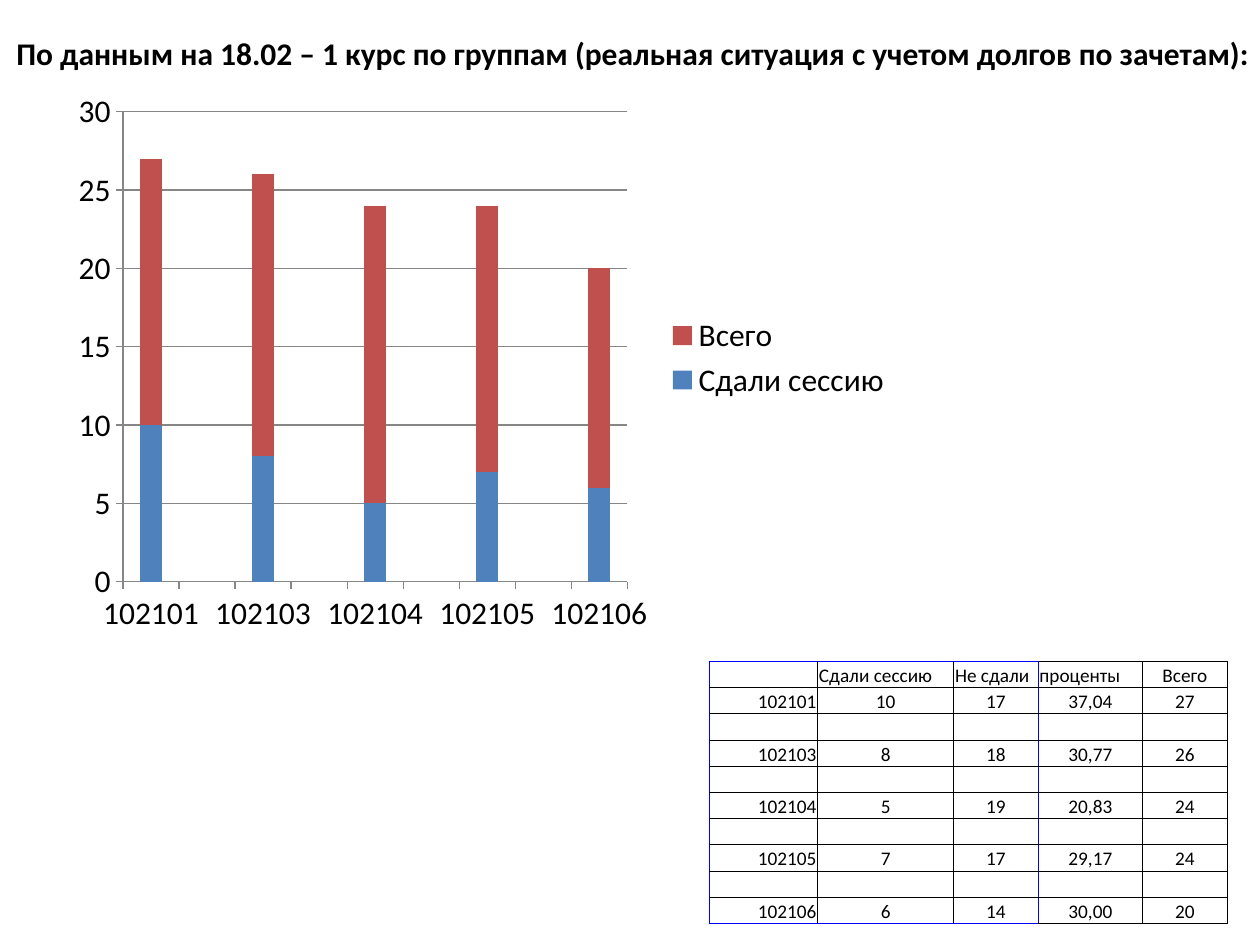
import pptx
import pptx.chart.data
import pptx.dml.color
import pptx.enum.chart
import pptx.enum.text
import pptx.util
from lxml import etree
from pptx.oxml.ns import qn

BLACK = pptx.dml.color.RGBColor(0x00, 0x00, 0x00)
LINK_BLUE = pptx.dml.color.RGBColor(0x00, 0x00, 0xFF)
PASSED_BLUE = pptx.dml.color.RGBColor(0x4F, 0x81, 0xBD)
TOTAL_RED = pptx.dml.color.RGBColor(0xC0, 0x50, 0x4D)
AXIS_GREY = pptx.dml.color.RGBColor(0x86, 0x86, 0x86)

ALIGN = pptx.enum.text.PP_ALIGN
ANCHOR = pptx.enum.text.MSO_ANCHOR

HEADING = "По данным на 18.02 – 1 курс по группам (реальная ситуация с учетом долгов по зачетам):"
HEADER = ["", "Сдали сессию", "Не сдали", "проценты", "Всего"]
GROUPS = [
    ("102101", 10, 17, "37,04", 27),
    ("102103", 8, 18, "30,77", 26),
    ("102104", 5, 19, "20,83", 24),
    ("102105", 7, 17, "29,17", 24),
    ("102106", 6, 14, "30,00", 20),
]


def spaced(items, gap):
    """Put a gap between neighbouring items."""
    result = []
    for item in items:
        result += [item, gap]
    return result[:-1]


class SessionSlide:
    """Style and slide; lengths are in a grid of 100 columns by 100 rows."""

    font_name = "Calibri"

    def __init__(self, deck):
        self.column = deck.slide_width / 100
        self.row = deck.slide_height / 100
        self.slide = deck.slides.add_slide(deck.slide_layouts[5])

    def box(self, left, top, width, height):
        return (round(left * self.column), round(top * self.row),
                round(width * self.column), round(height * self.row))

    def style_font(self, font, size, bold=False):
        font.name = self.font_name
        font.size = pptx.util.Pt(size)
        font.bold = bold
        font.color.rgb = BLACK

    def heading(self, text, place):
        title = self.slide.shapes.title
        title.left, title.top, title.width, title.height = self.box(*place)
        frame = title.text_frame
        frame.text = text
        frame.word_wrap = False
        frame.auto_size = pptx.enum.text.MSO_AUTO_SIZE.SHAPE_TO_FIT_TEXT
        frame.vertical_anchor = ANCHOR.TOP
        frame.paragraphs[0].alignment = ALIGN.LEFT
        self.style_font(frame.paragraphs[0].runs[0].font, 18, bold=True)

    def stacked_chart(self, categories, series, plot_shares, place):
        data = pptx.chart.data.CategoryChartData()
        data.categories = categories
        for name, values, _ in series:
            data.add_series(name, values)
        chart = self.slide.shapes.add_chart(
            pptx.enum.chart.XL_CHART_TYPE.COLUMN_STACKED, *self.box(*place), data).chart
        chart.has_title = False
        self.style_font(chart.font, 18)

        # Columns
        plot = chart.plots[0]
        plot.vary_by_categories = False
        plot.gap_width, plot.overlap = 150, 100
        for bars, (_, _, color) in zip(plot.series, series):
            bars.format.fill.solid()
            bars.format.fill.fore_color.rgb = color

        # Axes, gridlines and legend
        chart.value_axis.has_major_gridlines = True
        for axis in (chart.category_axis, chart.value_axis):
            axis.major_tick_mark = pptx.enum.chart.XL_TICK_MARK.OUTSIDE
            axis.format.line.color.rgb = AXIS_GREY
        chart.value_axis.major_gridlines.format.line.color.rgb = AXIS_GREY
        chart.has_legend = True
        chart.legend.position = pptx.enum.chart.XL_LEGEND_POSITION.RIGHT
        chart.legend.include_in_layout = False

        # Fixed inner plot area
        plot_area = chart.element.find(".//" + qn("c:plotArea"))
        layout = plot_area.find(qn("c:layout"))
        if layout is None:
            layout = etree.Element(qn("c:layout"))
            plot_area.insert(0, layout)
        manual = etree.SubElement(layout, qn("c:manualLayout"))
        settings = [("layoutTarget", "inner"), ("xMode", "edge"), ("yMode", "edge")]
        for tag, value in settings + list(zip("xywh", plot_shares)):
            etree.SubElement(manual, qn("c:" + tag)).set("val", str(value))

    def borders(self, cell, colors):
        properties = cell._tc.get_or_add_tcPr()
        for side, color in zip("LRTB", colors):
            line = etree.SubElement(properties, qn("a:ln" + side), w=str(pptx.util.Pt(0.5)))
            fill = etree.SubElement(line, qn("a:solidFill"))
            etree.SubElement(fill, qn("a:srgbClr"), val=str(color))

    def cell(self, cell, text, alignment, colors):
        self.borders(cell, colors)
        cell.fill.background()
        cell.margin_left = cell.margin_top = cell.margin_right = pptx.util.Inches(0.01)
        cell.margin_bottom = 0
        cell.vertical_anchor = ANCHOR.BOTTOM
        cell.text_frame.text = text
        paragraph = cell.text_frame.paragraphs[0]
        paragraph.alignment = alignment
        for run in paragraph.runs:
            self.style_font(run.font, 11)
        if not text:
            etree.SubElement(paragraph._p, qn("a:endParaRPr"), sz="1100")

    def table(self, rows, column_widths, place):
        table = self.slide.shapes.add_table(
            len(rows), len(column_widths), *self.box(*place)).table
        table.first_row = table.horz_banding = False
        for column, width in zip(table.columns, column_widths):
            column.width = round(width * self.column)
        last = len(rows) - 1
        for r, values in enumerate(rows):
            for c, text in enumerate(values):
                if r == 0:
                    alignment = ALIGN.CENTER if c == 4 else ALIGN.LEFT
                else:
                    alignment = ALIGN.RIGHT if c == 0 else ALIGN.CENTER
                blue_sides = (c in (0, 3), c == 2, r == 0 and c < 3, r == last and c < 3)
                colors = [LINK_BLUE if blue else BLACK for blue in blue_sides]
                self.cell(table.cell(r, c), str(text), alignment, colors)


def main():
    deck = pptx.Presentation()
    deck.slide_width = pptx.util.Inches(10)
    deck.slide_height = pptx.util.Inches(7.5)
    page = SessionSlide(deck)

    page.heading(HEADING, (0.3, 2.93, 100.9, 5.33))

    # Passed and remaining students by group
    names, passed, failed, _, _ = zip(*GROUPS)
    page.stacked_chart(
        spaced(names, ""),
        [("Сдали сессию", spaced(passed, None), PASSED_BLUE),
         ("Всего", spaced(failed, None), TOTAL_RED)],
        (0.07, 0.06, 0.6, 0.84),
        (5.1, 8.27, 66.7, 59.2))

    # Results by group, with an empty row between groups
    page.table([HEADER] + spaced(GROUPS, [""] * len(HEADER)),
               (8.6, 10.8, 6.7, 8.3, 6.7),
               (56.3, 70, 41.1, 27.73))

    deck.save("out.pptx")


if __name__ == "__main__":
    main()
